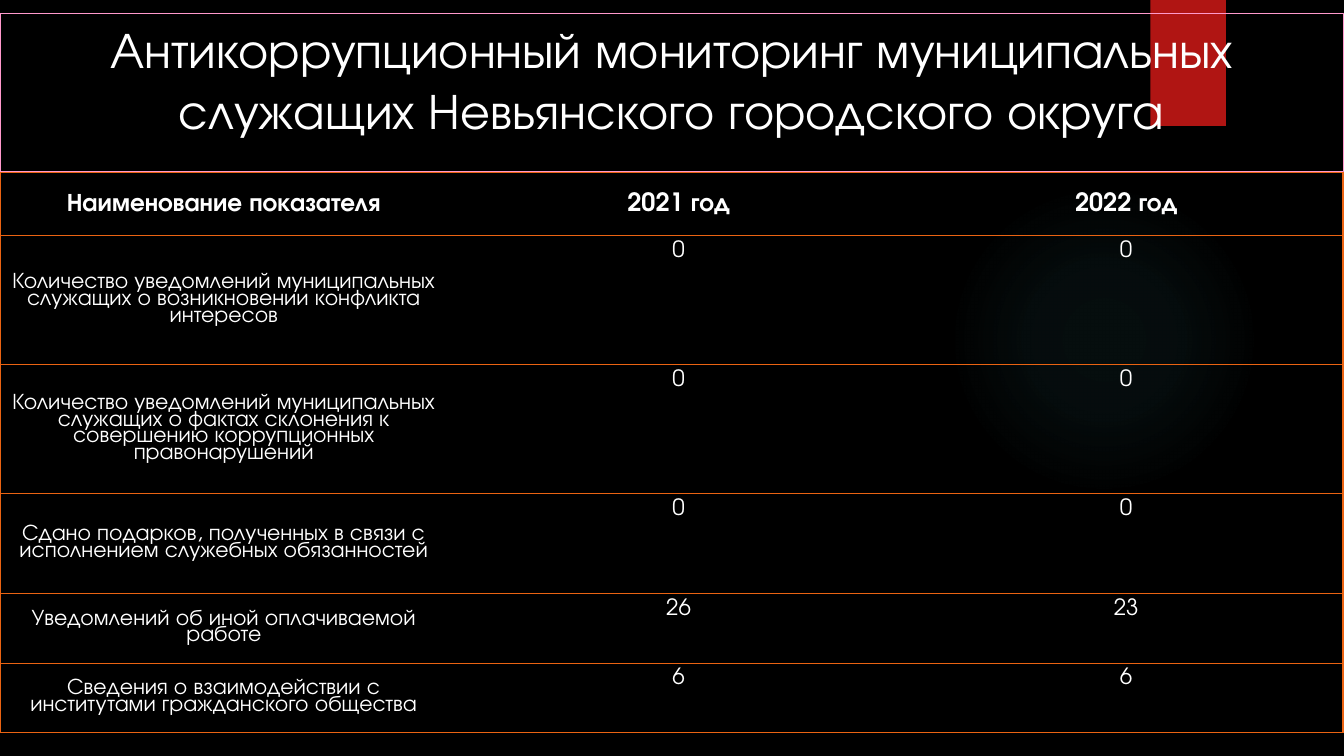
import pptx
import pptx.util
import pptx.dml.color
import pptx.enum.shapes
import pptx.enum.text
import pptx.oxml
import pptx.oxml.ns

Inches, Pt = pptx.util.Inches, pptx.util.Pt
RGBColor = pptx.dml.color.RGBColor
SHAPE = pptx.enum.shapes.MSO_SHAPE
ANCHOR = pptx.enum.text.MSO_ANCHOR
CENTER = pptx.enum.text.PP_ALIGN.CENTER

BLACK = RGBColor(0x00, 0x00, 0x00)
WHITE = RGBColor(0xFF, 0xFF, 0xFF)
RED = RGBColor(0xB0, 0x15, 0x13)
TEAL = RGBColor(0x50, 0xB9, 0xC1)
ORANGE = RGBColor(0xEA, 0x63, 0x12)
PINK = RGBColor(0xFF, 0x99, 0xCC)
PLAIN_TABLE = "{2D5ABB26-0587-4C30-8999-92F81FD0307C}"
NS = 'xmlns:a="http://schemas.openxmlformats.org/drawingml/2006/main"'


class Deck:
    font = "TeX Gyre Adventor"

    def __init__(self):
        self.prs = pptx.Presentation()
        self.prs.slide_width = Inches(13.33)
        self.prs.slide_height = Inches(7.5)
        self.s = self.prs.slides.add_slide(self.prs.slide_layouts[5])
        fill = self.s.background.fill
        fill.solid()
        fill.fore_color.rgb = BLACK

    def set_text(self, tf, text, size, bold=False, spacing=1.0):
        tf.text = text
        p = tf.paragraphs[0]
        p.alignment = CENTER
        p.line_spacing = spacing
        font = p.runs[0].font
        font.name, font.size, font.bold = self.font, Pt(size), bold
        font.color.rgb = WHITE

    def shape(self, kind, box, color):
        sp = self.s.shapes.add_shape(kind, *map(Inches, box))
        sp.shadow.inherit = False
        sp.line.fill.background()
        sp.fill.solid()
        sp.fill.fore_color.rgb = color
        return sp

    def glow(self, box, color, stops):
        sp = self.shape(SHAPE.OVAL, box, color)
        gs = "".join(
            f'<a:gs pos="{pos * 1000}"><a:srgbClr val="{color}">'
            f'<a:alpha val="{alpha * 1000}"/></a:srgbClr></a:gs>'
            for pos, alpha in stops)
        grad = pptx.oxml.parse_xml(
            f'<a:gradFill {NS} rotWithShape="1"><a:gsLst>{gs}</a:gsLst>'
            '<a:path path="circle"><a:fillToRect l="50000" t="50000" '
            'r="50000" b="50000"/></a:path></a:gradFill>')
        solid = sp.element.spPr.find(pptx.oxml.ns.qn("a:solidFill"))
        sp.element.spPr.replace(solid, grad)

    def borders(self, cell, sides):
        tc_pr = cell._tc.get_or_add_tcPr()
        for i, side in enumerate(sides):
            tc_pr.insert(i, pptx.oxml.parse_xml(
                f'<a:ln{side} {NS} w="12700"><a:solidFill>'
                f'<a:srgbClr val="{ORANGE}"/></a:solidFill></a:ln{side}>'))

    def table(self, left, top, widths, heights, rows):
        frame = self.s.shapes.add_table(
            len(rows), len(widths), Inches(left), Inches(top),
            Inches(sum(widths)), Inches(sum(heights)))
        table = frame.table
        style = table._tbl.tblPr.find(pptx.oxml.ns.qn("a:tableStyleId"))
        style.text = PLAIN_TABLE
        for column, width in zip(table.columns, widths):
            column.width = Inches(width)
        for i, (row, height) in enumerate(zip(rows, heights)):
            table.rows[i].height = Inches(height)
            for j, text in enumerate(row):
                cell = table.cell(i, j)
                header, label = i == 0, j == 0
                self.set_text(cell.text_frame, text, 18 if header else 16,
                              header, 0.8 if label and not header else 1.0)
                if header or label:
                    cell.vertical_anchor = ANCHOR.MIDDLE
                cell.fill.background()
                self.borders(cell, ("LTB", "TB", "RTB")[j])

    def title(self, text, box, size):
        sp = self.s.shapes.title
        sp.left, sp.top, sp.width, sp.height = map(Inches, box)
        sp.line.color.rgb = PINK
        sp.line.width = Pt(0.75)
        tf = sp.text_frame
        tf.word_wrap = True
        tf.auto_size = pptx.enum.text.MSO_AUTO_SIZE.NONE
        tf.vertical_anchor = ANCHOR.TOP
        self.set_text(tf, text, size)
        # Bring the title in front of the ribbon
        self.s.shapes.element.append(sp.element)


def main():
    deck = Deck()

    # Backdrop: soft glow and red ribbon
    deck.glow((9.41, 1.83, 3.08, 3.08), TEAL, [(0, 7), (36, 6), (69, 0)])
    deck.shape(SHAPE.RECTANGLE, (11.41, 0, 0.75, 1.25), RED)

    # Indicators by year
    rows = [
        ("Наименование показателя", "2021 год", "2022 год"),
        ("Количество уведомлений муниципальных служащих о возникновении "
         "конфликта интересов", "0", "0"),
        ("Количество уведомлений муниципальных служащих о фактах склонения "
         "к совершению коррупционных правонарушений", "0", "0"),
        ("Сдано подарков, полученных в связи с исполнением служебных "
         "обязанностей", "0", "0"),
        ("Уведомлений об иной оплачиваемой работе", "26", "23"),
        ("Сведения о взаимодействии с институтами гражданского общества",
         "6", "6"),
    ]
    deck.table(0, 1.71, (4.44, 4.58, 4.3),
               (0.63, 1.28, 1.28, 0.99, 0.69, 0.69), rows)

    # Heading
    deck.title("Антикоррупционный мониторинг муниципальных служащих "
               "Невьянского городского округа", (0, 0.13, 13.33, 1.57), 36)

    deck.prs.save("out.pptx")


if __name__ == "__main__":
    main()
